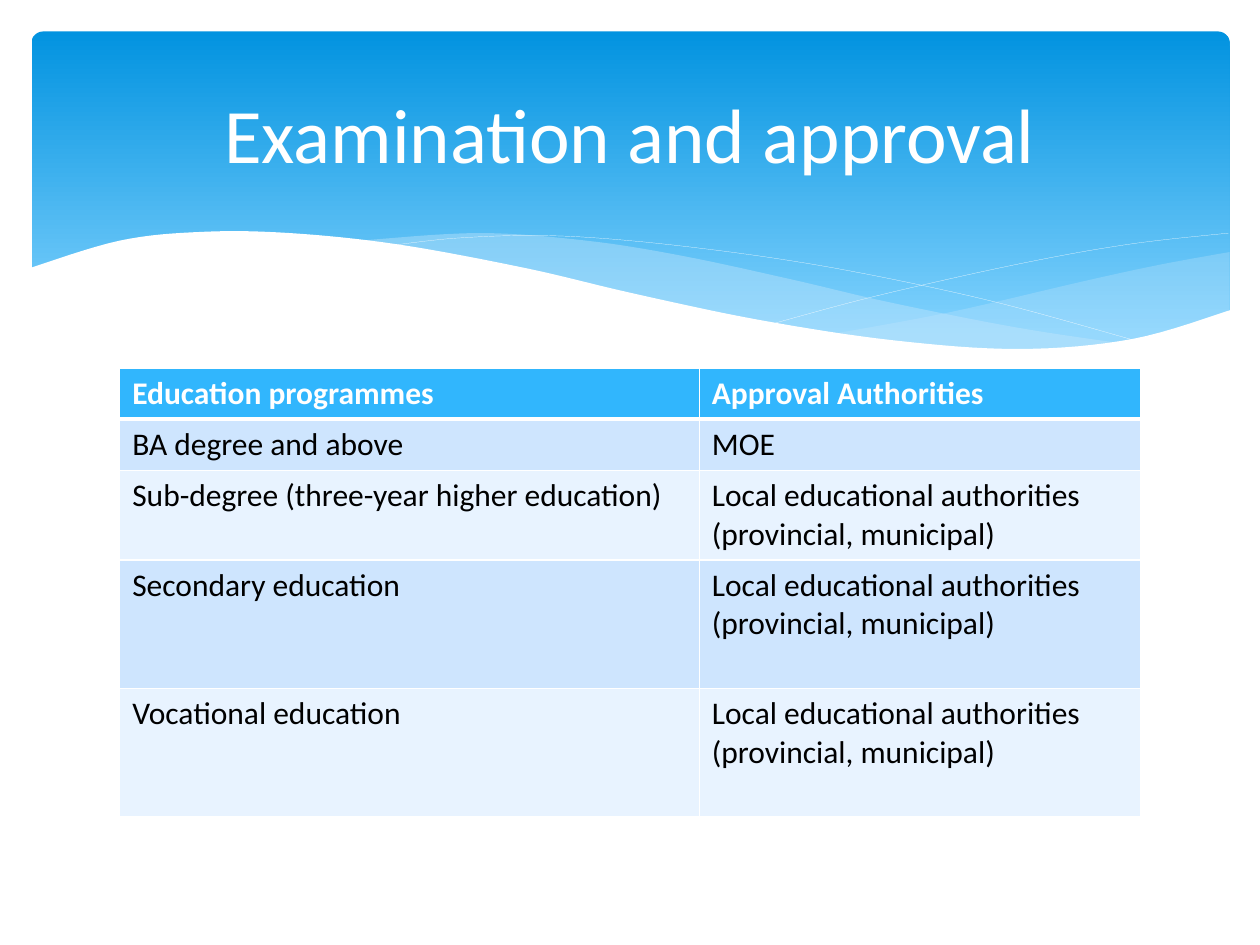
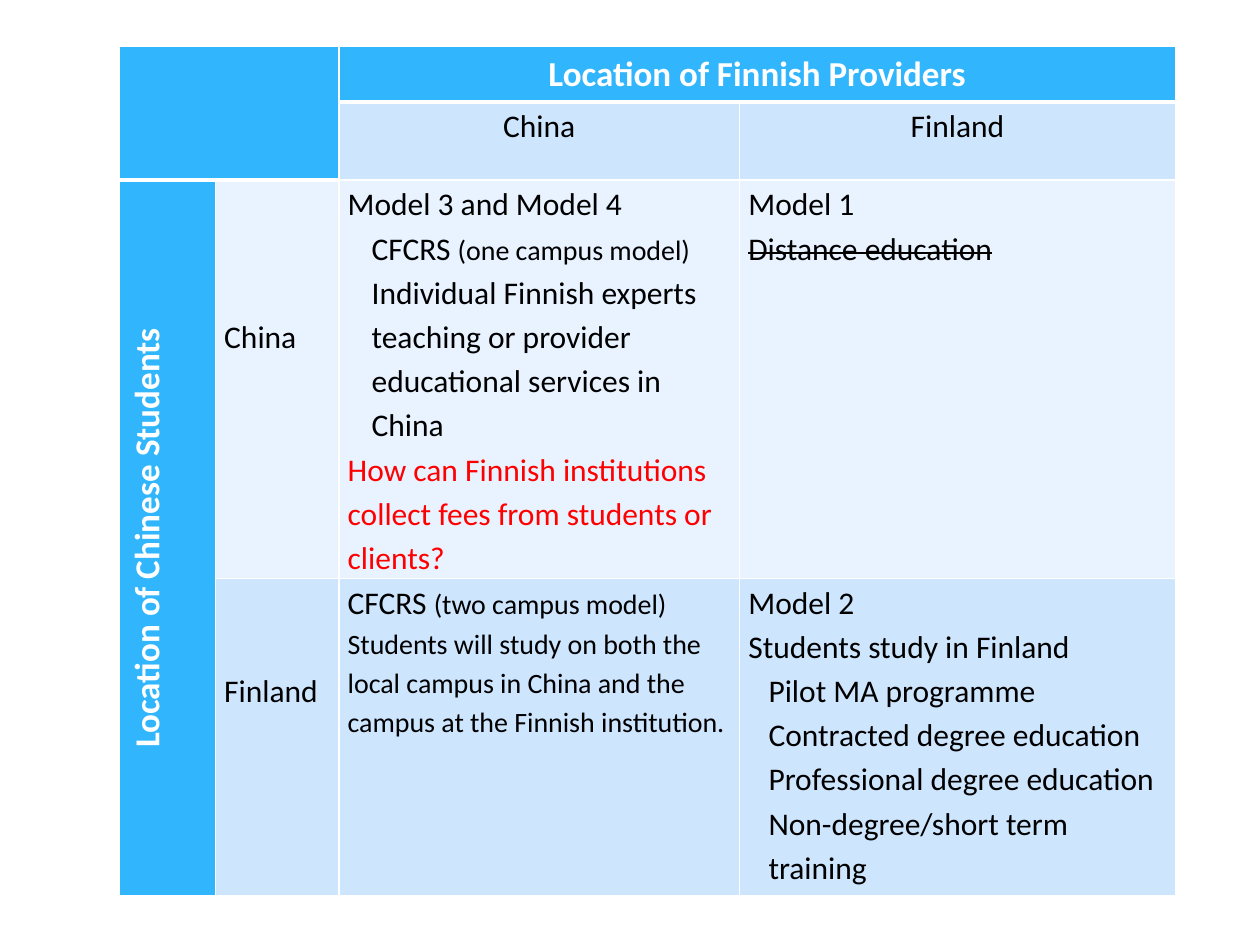
import lxml.etree
import pptx
import pptx.dml.color
import pptx.enum.shapes
import pptx.enum.text
import pptx.oxml.ns
import pptx.util

Inches = pptx.util.Inches
Pt = pptx.util.Pt
RGBColor = pptx.dml.color.RGBColor
qn = pptx.oxml.ns.qn
CENTER = pptx.enum.text.PP_ALIGN.CENTER
FONT = "Calibri"
TABLE_LEFT = 0.95
LINE_SPACING = 1.15
TEXT_LINE_HEIGHT = 0.35
STEPS_PER_SPAN = 8
COLORS = {
    "white": "FFFFFF",
    "black": "000000",
    "red": "FF0000",
    "header": "31B6FD",
    "band_dark": "CEE5FE",
    "band_light": "E8F3FF",
    "banner_top": "0293E0",
    "banner_bottom": "83D3FE",
    "wave": "C6E7FC",
}


def add_text(text_frame, text, size=18, color="black", bold=False, align=None,
             indent=0, spacing=1.0, strike=False, same_paragraph=False):
    paragraph = text_frame.paragraphs[-1]
    if paragraph.runs and not same_paragraph:
        paragraph = text_frame.add_paragraph()
    if not same_paragraph:
        paragraph.alignment = align
        paragraph.line_spacing = spacing
        if indent:
            properties = paragraph._p.get_or_add_pPr()
            properties.set("marL", str(Inches(indent)))
            properties.set("indent", "0")
    run = paragraph.add_run()
    run.text = text
    run.font.name = FONT
    run.font.size = Pt(size)
    run.font.bold = bold
    run.font.color.rgb = RGBColor.from_string(COLORS[color])
    if strike:
        run._r.get_or_add_rPr().set("strike", "sngStrike")


def smooth_curve(knots):
    padded = [knots[0], *knots, knots[-1]]
    points = [knots[0]]
    for before, start, end, after in zip(padded, padded[1:], padded[2:], padded[3:]):
        for step in range(1, STEPS_PER_SPAN + 1):
            t = step / STEPS_PER_SPAN
            points.append(tuple(
                b + t * (c - a) / 2
                + t ** 2 * (2 * a - 5 * b + 4 * c - d) / 2
                + t ** 3 * (3 * b - a - 3 * c + d) / 2
                for a, b, c, d in zip(before, start, end, after)))
    return points


presentation = pptx.Presentation()
presentation.slide_width = Inches(10)
presentation.slide_height = Inches(7.5)
blank_layout = presentation.slide_layouts[6]

approval_slide = presentation.slides.add_slide(blank_layout)
banner = approval_slide.shapes.add_shape(
    pptx.enum.shapes.MSO_SHAPE.ROUNDED_RECTANGLE,
    Inches(0.25), Inches(0.25), Inches(9.51), Inches(2.7))
banner.adjustments[0] = 0.034
banner.shadow.inherit = False
banner.line.fill.background()
banner.fill.gradient()
banner.fill.gradient_angle = 270
for stop, position, color in zip(banner.fill.gradient_stops, (0, 0.9),
                                 ("banner_top", "banner_bottom")):
    stop.position = position
    stop.color.rgb = RGBColor.from_string(COLORS[color])

right_wave = {
    "fill": "wave", "opacity": 29,
    "edges": [
        [(9.76, 2), (9.21, 2.1), (8.61, 2.23), (7.53, 2.48), (6.61, 2.65)],
        [(6.61, 2.65), (7.32, 2.74), (8.03, 2.78), (8.72, 2.74), (9.28, 2.63), (9.76, 2.47)],
    ],
}
middle_wave = {
    "fill": "wave", "opacity": 40,
    "edges": [
        [(8.93, 2.73), (8.07, 2.6), (7.06, 2.4), (6.29, 2.22), (5.41, 2.03),
         (4.65, 1.91), (3.8, 1.85), (2.86, 1.91)],
        [(2.86, 1.91), (3.62, 2.03), (4.49, 2.22), (5.3, 2.4), (6.18, 2.58),
         (7.09, 2.72), (8.07, 2.78), (8.93, 2.73)],
    ],
}
falling_line = {
    "edges": [[(3.09, 1.95), (3.63, 1.89), (4.33, 1.87), (5.1, 1.92), (6.08, 2.04),
               (6.95, 2.19), (7.95, 2.41), (9.07, 2.72)]],
}
rising_line = {
    "edges": [[(6.13, 2.57), (6.95, 2.35), (8.06, 2.1), (8.95, 1.94), (9.75, 1.85)]],
}
white_wave = {
    "fill": "white", "opacity": 100,
    "edges": [
        [(9.77, 2.46), (8.99, 2.69), (8.09, 2.77), (7.08, 2.7), (6.03, 2.54), (5.03, 2.33),
         (4.18, 2.13), (3.16, 1.94), (2.3, 1.85), (1.61, 1.84), (0.95, 1.91), (0.23, 2.13)],
        [(0.23, 3.29), (9.77, 3.29)],
    ],
}
for wave in (right_wave, middle_wave, falling_line, rising_line, white_wave):
    fill = wave.get("fill")
    points = [(Inches(x), Inches(y))
              for edge in wave["edges"] for x, y in smooth_curve(edge)]
    builder = approval_slide.shapes.build_freeform(*points[0])
    builder.add_line_segments(points[1:], close=fill is not None)
    curve = builder.convert_to_shape()
    curve.shadow.inherit = False
    if fill:
        curve.line.fill.background()
        curve.fill.solid()
        curve.fill.fore_color.rgb = RGBColor.from_string(COLORS[fill])
        color_element = curve._element.spPr.find(qn("a:solidFill"))[0]
        lxml.etree.SubElement(color_element, qn("a:alpha"), val=str(wave["opacity"] * 1000))
    else:
        curve.fill.background()
        curve.line.color.rgb = RGBColor.from_string(COLORS["white"])
        curve.line.width = Pt(0.1)

location_slide = presentation.slides.add_slide(blank_layout)
header_row = ("header", "header")
dark_row = ("band_dark", "band_dark")
light_row = ("band_light", "band_light")
table_plans = [
    {
        "slide": approval_slide, "top": 2.92,
        "widths": (4.6, 3.5), "heights": (0.4, 0.41, 0.71, 1.02, 1.02),
        "fills": (header_row, dark_row, light_row, dark_row, light_row),
        "header_rows": 1, "margins": (0.1, 0.05),
    },
    {
        "slide": location_slide, "top": 0.37,
        "widths": (0.76, 0.98, 3.18, 3.46), "heights": (0.44, 0.62, 3.16, 2.52),
        "fills": (header_row * 2, header_row + dark_row,
                  ("header", "band_light") + light_row, ("header", "band_dark") + dark_row),
        "header_rows": 2, "margins": (0.07, 0),
    },
]
tables = []
for plan in table_plans:
    widths, heights = plan["widths"], plan["heights"]
    table = plan["slide"].shapes.add_table(
        len(heights), len(widths), Inches(TABLE_LEFT), Inches(plan["top"]),
        Inches(sum(widths)), Inches(sum(heights))).table
    for column, width in zip(table.columns, widths):
        column.width = Inches(width)
    for row_index, (row, height) in enumerate(zip(table.rows, heights)):
        row.height = Inches(height)
        for cell, fill in zip(row.cells, plan["fills"][row_index]):
            side_margin, end_margin = plan["margins"]
            cell.margin_left = cell.margin_right = Inches(side_margin)
            cell.margin_top = cell.margin_bottom = Inches(end_margin)
            under_header = fill == "header" and row_index < plan["header_rows"]
            properties = cell._tc.get_or_add_tcPr()
            for side in "LRTB":
                border_width = Pt(3 if side == "B" and under_header else 1)
                border = lxml.etree.SubElement(
                    properties, qn(f"a:ln{side}"), w=str(border_width))
                border_fill = lxml.etree.SubElement(border, qn("a:solidFill"))
                lxml.etree.SubElement(border_fill, qn("a:srgbClr"), val=COLORS["white"])
            cell.fill.solid()
            cell.fill.fore_color.rgb = RGBColor.from_string(COLORS[fill])
    tables.append(table)
approval_table, location_table = tables

local_authorities = "Local educational authorities (provincial, municipal)"
approval_rows = [
    ("Education programmes", "Approval Authorities"),
    ("BA degree and above", "MOE"),
    ("Sub-degree (three-year higher education)", local_authorities),
    ("Secondary education", local_authorities),
    ("Vocational education", local_authorities),
]
for row_index, (row, texts) in enumerate(zip(approval_table.rows, approval_rows)):
    is_header = row_index == 0
    for cell, text in zip(row.cells, texts):
        add_text(cell.text_frame, text, bold=is_header,
                 color="white" if is_header else "black")

title = approval_slide.shapes.add_textbox(Inches(0.5), Inches(0.37), Inches(9), Inches(1.37))
title.text_frame.word_wrap = True
title.text_frame.vertical_anchor = pptx.enum.text.MSO_ANCHOR.MIDDLE
add_text(title.text_frame, "Examination and approval", size=44, color="white", align=CENTER)

for first, last in (((0, 0), (1, 1)), ((0, 2), (0, 3)), ((2, 0), (3, 0))):
    location_table.cell(*first).merge(location_table.cell(*last))
location_table.cell(2, 0)._tc.get_or_add_tcPr().set("vert", "vert270")
for row_index, lines_above in ((2, 3), (3, 2)):
    location_table.cell(row_index, 1).margin_top = Inches(lines_above * TEXT_LINE_HEIGHT)

heading = {"size": 20, "color": "white", "bold": True, "align": CENTER}
centered = {"align": CENTER}
aside = {"size": 16, "same_paragraph": True}
model_item = {"indent": 0.19}
programme_item = {"indent": 0.16}
location_texts = {
    (0, 2): [("Location of Finnish Providers", heading)],
    (1, 2): [("China", centered)],
    (1, 3): [("Finland", centered)],
    (2, 0): [("Location of Chinese Students", heading)],
    (2, 1): [("China", {})],
    (2, 2): [
        ("Model 3 and Model 4", {}),
        ("CFCRS ", model_item),
        ("(one campus model)", aside),
        ("Individual Finnish experts teaching or provider educational services in China",
         model_item),
        ("How can Finnish institutions collect fees from students or clients?",
         {"color": "red"}),
    ],
    (2, 3): [("Model 1", {}), ("Distance education", {"strike": True})],
    (3, 1): [("Finland", {})],
    (3, 2): [
        ("CFCRS ", {}),
        ("(two campus model)", aside),
        ("Students will study on both the local campus in China and the campus "
         "at the Finnish institution.", {"size": 16}),
    ],
    (3, 3): [
        ("Model 2", {}),
        ("Students study in Finland", {}),
        ("Pilot MA programme", programme_item),
        ("Contracted degree education", programme_item),
        ("Professional degree education", programme_item),
        ("Non-degree/short term training", programme_item),
    ],
}
for position, entries in location_texts.items():
    text_frame = location_table.cell(*position).text_frame
    for text, text_format in entries:
        add_text(text_frame, text, spacing=LINE_SPACING, **text_format)

presentation.save("out.pptx")
